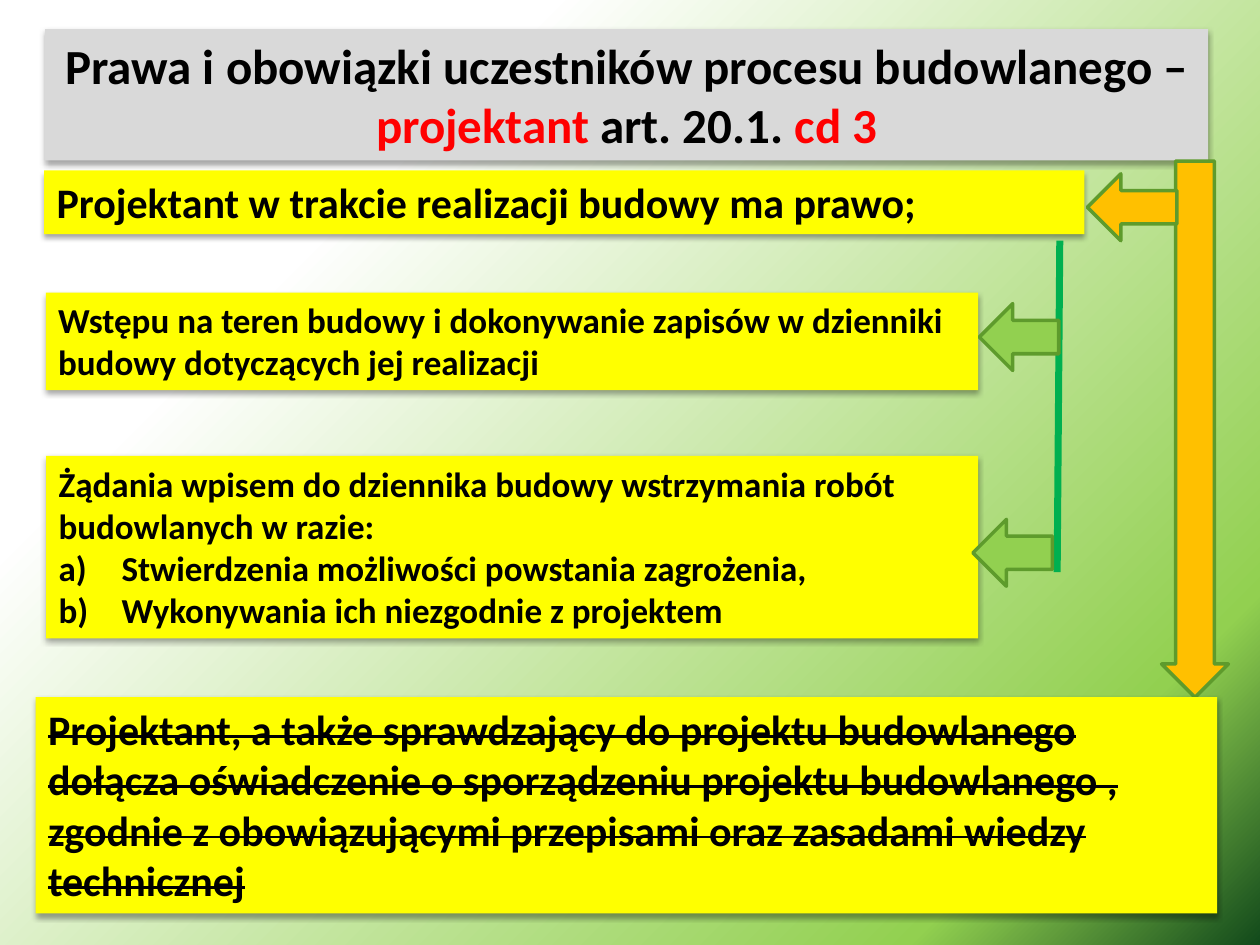
from lxml import etree
from pptx import Presentation
from pptx.dml.color import RGBColor
from pptx.enum.shapes import MSO_CONNECTOR, MSO_SHAPE
from pptx.enum.text import MSO_AUTO_SIZE, PP_ALIGN
from pptx.oxml import parse_xml
from pptx.oxml.ns import nsdecls, qn
from pptx.util import Pt

CENTER = PP_ALIGN.CENTER
DOWN_ARROW = MSO_SHAPE.DOWN_ARROW
STRAIGHT = MSO_CONNECTOR.STRAIGHT
FIT_SHAPE = MSO_AUTO_SIZE.SHAPE_TO_FIT_TEXT
BLANK = 6

BLACK, RED, GREY, YELLOW = "000000", "FF0000", "D9D9D9", "FFFF00"
ORANGE, LIGHT_GREEN, GREEN, OUTLINE = "FFC000", "92D050", "00B050", "5E9B2C"
BACKGROUND_STOPS = [(0, "124A1B"), (16, "92D050"), (75, "FFFFFF")]
TEXT_FORMAT = {"name": "Calibri", "bold": True}
FRAME_FORMAT = {"word_wrap": True, "auto_size": FIT_SHAPE}


def color(hex_value):
    return RGBColor.from_string(hex_value)


def apply_format(target, values):
    for attribute, value in values.items():
        setattr(target, attribute, value)


def paint_background(slide):
    fill = slide.background.fill
    fill.solid()
    stops = "".join(
        f'<a:gs pos="{position * 1000}"><a:srgbClr val="{tone}"/></a:gs>'
        for position, tone in BACKGROUND_STOPS
    )
    gradient = parse_xml(
        f'<a:gradFill {nsdecls("a")} rotWithShape="1"><a:gsLst>{stops}</a:gsLst>'
        '<a:path path="circle"><a:fillToRect l="100000" t="100000"/></a:path>'
        "</a:gradFill>"
    )
    solid = next(slide.background._cSld.iter(qn("a:solidFill")))
    solid.getparent().replace(solid, gradient)


def add_shadow(panel):
    panel._element.spPr.append(parse_xml(
        f'<a:effectLst {nsdecls("a")}>'
        '<a:outerShdw blurRad="40000" dist="23000" dir="5400000" rotWithShape="0">'
        '<a:srgbClr val="000000"><a:alpha val="35000"/></a:srgbClr>'
        "</a:outerShdw></a:effectLst>"
    ))


def add_lettering(paragraph):
    properties = paragraph._p.get_or_add_pPr()
    properties.set("marL", str(Pt(36)))
    properties.set("indent", str(-Pt(36)))
    numbering = etree.SubElement(properties, qn("a:buAutoNum"))
    numbering.set("type", "alphaLcParenR")


def add_run(paragraph, text, size, tone=BLACK, struck=False):
    run = paragraph.add_run()
    run.text = text
    apply_format(run.font, {**TEXT_FORMAT, "size": Pt(size)})
    run.font.color.rgb = color(tone)
    if struck:
        run._r.get_or_add_rPr().set("strike", "sngStrike")


def add_panel(slide, box, fill=YELLOW):
    panel = slide.shapes.add_textbox(*map(Pt, box))
    panel.fill.solid()
    panel.fill.fore_color.rgb = color(fill)
    add_shadow(panel)
    apply_format(panel.text_frame, FRAME_FORMAT)
    return panel.text_frame


def add_title(slide, box, parts):
    heading = add_panel(slide, box, GREY).paragraphs[0]
    heading.alignment = CENTER
    for text, tone in parts:
        add_run(heading, text, 28, tone)


def add_statement(slide, box, text, size, points=(), struck=False):
    frame = add_panel(slide, box)
    add_run(frame.paragraphs[0], text, size, struck=struck)
    for point in points:
        paragraph = frame.add_paragraph()
        add_lettering(paragraph)
        add_run(paragraph, point, size)


def add_arrow(slide, box, fill, rotation=90, shaft=0.5):
    arrow = slide.shapes.add_shape(DOWN_ARROW, *map(Pt, box))
    arrow.shadow.inherit = False
    arrow.rotation = rotation
    arrow.adjustments[0] = shaft
    arrow.fill.solid()
    arrow.fill.fore_color.rgb = color(fill)
    arrow.line.color.rgb = color(OUTLINE)
    arrow.line.width = Pt(2)


def add_stem(slide, ends):
    stem = slide.shapes.add_connector(STRAIGHT, *map(Pt, ends))
    stem.line.color.rgb = color(GREEN)
    stem.line.width = Pt(4)
    etree.SubElement(stem._element.spPr, qn("a:effectLst"))


def main():
    deck = Presentation()
    deck.slide_width, deck.slide_height = Pt(720), Pt(540)
    slide = deck.slides.add_slide(deck.slide_layouts[BLANK])
    paint_background(slide)

    add_title(slide, (25.8, 16.7, 664.6, 75), [
        ("Prawa i obowiązki uczestników procesu budowlanego – ", BLACK),
        ("projektant", RED),
        (" art. 20.1. ", BLACK),
        ("cd 3", RED),
    ])
    add_arrow(slide, (663.8, 92, 38.2, 306.5), ORANGE, rotation=0, shaft=0.582)
    add_statement(
        slide, (26.2, 167.2, 532.8, 55.7),
        "Wstępu na teren budowy i dokonywanie zapisów w dzienniki budowy "
        "dotyczących jej realizacji", 20,
    )
    add_statement(
        slide, (25.2, 97.4, 594.5, 36.4),
        "Projektant w trakcie realizacji budowy ma prawo;", 24,
    )
    add_statement(
        slide, (20.4, 398.4, 675.2, 123.6),
        "Projektant, a także sprawdzający do projektu budowlanego dołącza "
        "oświadczenie o sporządzeniu projektu budowlanego , zgodnie z "
        "obowiązującymi przepisami oraz zasadami wiedzy technicznej",
        24, struck=True,
    )
    add_arrow(slide, (627.8, 92.9, 38.2, 51.1), ORANGE)
    add_statement(
        slide, (26.4, 260.6, 532.6, 104.2),
        "Żądania wpisem do dziennika budowy wstrzymania robót budowlanych w razie:",
        20,
        points=(
            "Stwierdzenia możliwości powstania zagrożenia,",
            "Wykonywania ich niezgodnie z projektem",
        ),
    )
    add_stem(slide, (605.6, 137.5, 604.1, 326.9))
    for left, top in ((563.2, 169.9), (559.6, 293.2)):
        add_arrow(slide, (left, top, 38.2, 45.4), LIGHT_GREEN)

    deck.save("out.pptx")


if __name__ == "__main__":
    main()
